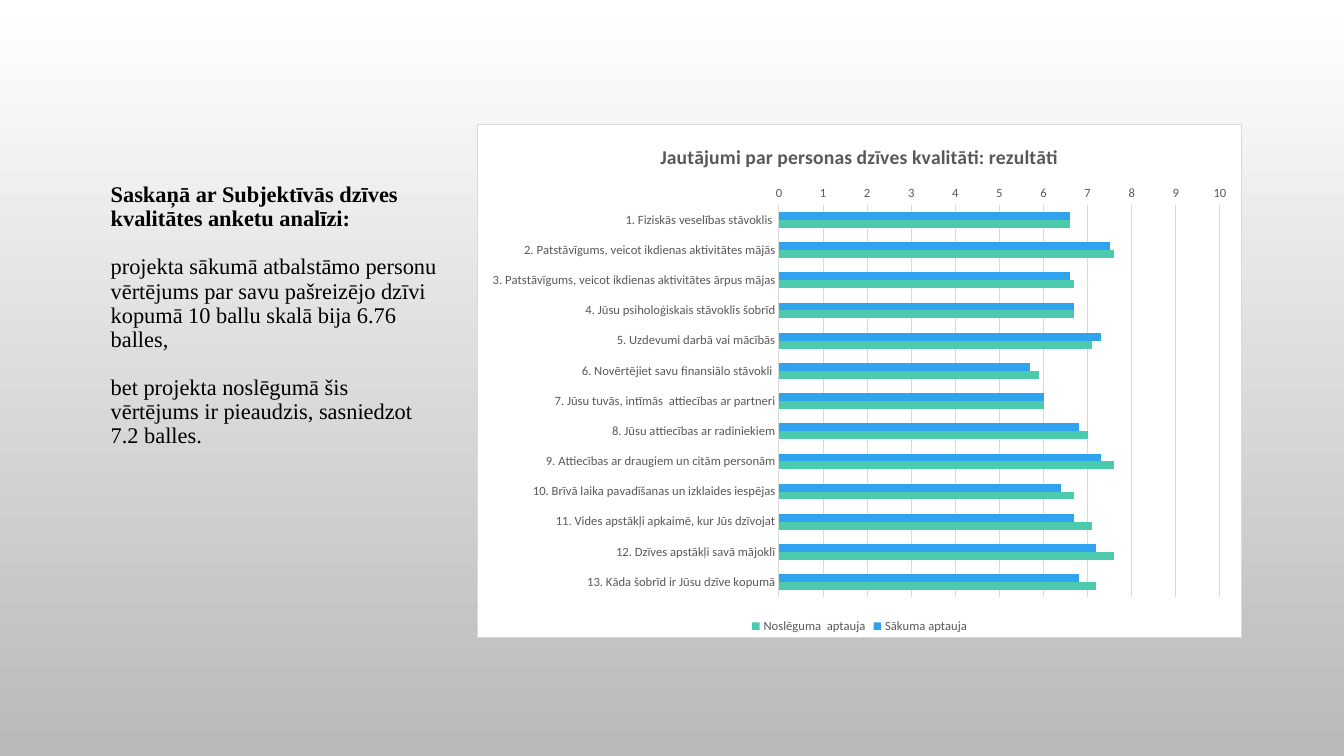
from lxml.etree import fromstring
from pptx import Presentation
from pptx.chart.data import CategoryChartData
from pptx.dml.color import RGBColor
from pptx.enum.chart import XL_CHART_TYPE, XL_LEGEND_POSITION, XL_TICK_MARK
from pptx.enum.text import MSO_ANCHOR
from pptx.oxml.ns import nsdecls
from pptx.util import Inches, Pt

WHITE = RGBColor(0xFF, 0xFF, 0xFF)
SILVER = RGBColor(0xB9, 0xB9, 0xB9)
BLACK = RGBColor(0, 0, 0)
GRAY = RGBColor(0x59, 0x59, 0x59)
PALE = RGBColor(0xD9, 0xD9, 0xD9)
BLUE = RGBColor(0x2F, 0xA3, 0xEE)
GREEN = RGBColor(0x4B, 0xCA, 0xAD)

TEXTS = [
    "Saskaņā ar Subjektīvās dzīves kvalitātes anketu analīzi:",
    "projekta sākumā atbalstāmo personu vērtējums par savu pašreizējo "
    "dzīvi kopumā 10 ballu skalā bija 6.76 balles,",
    "bet projekta noslēgumā šis vērtējums ir pieaudzis, sasniedzot 7.2 balles.",
]
TITLE = "Jautājumi par personas dzīves kvalitāti: rezultāti"
# Question, score at the start, score at the end
SCORES = [
    ("1. Fiziskās veselības stāvoklis ", 6.6, 6.6),
    ("2. Patstāvīgums, veicot ikdienas aktivitātes mājās", 7.5, 7.6),
    ("3. Patstāvīgums, veicot ikdienas aktivitātes ārpus mājas", 6.6, 6.7),
    ("4. Jūsu psiholoģiskais stāvoklis šobrīd", 6.7, 6.7),
    ("5. Uzdevumi darbā vai mācībās", 7.3, 7.1),
    ("6. Novērtējiet savu finansiālo stāvokli ", 5.7, 5.9),
    ("7. Jūsu tuvās, intīmās  attiecības ar partneri", 6, 6),
    ("8. Jūsu attiecības ar radiniekiem", 6.8, 7),
    ("9. Attiecības ar draugiem un citām personām", 7.3, 7.6),
    ("10. Brīvā laika pavadīšanas un izklaides iespējas", 6.4, 6.7),
    ("11. Vides apstākļi apkaimē, kur Jūs dzīvojat", 6.7, 7.1),
    ("12. Dzīves apstākļi savā mājoklī", 7.2, 7.6),
    ("13. Kāda šobrīd ir Jūsu dzīve kopumā", 6.8, 7.2),
]


def set_font(font, size, color, name="Calibri", bold=False):
    font.size, font.name, font.bold = Pt(size), name, bold
    font.color.rgb = color


def set_line(line, color):
    line.color.rgb = color
    line.width = Pt(0.75)


def paint_back(slide):
    fill = slide.background.fill
    fill.gradient()
    fill.gradient_angle = 270
    for stop, color, place in zip(fill.gradient_stops, (WHITE, SILVER), (0, 1)):
        stop.color.rgb = color
        stop.position = place


def add_text(slide, left, top, width, height):
    frame = slide.shapes.add_textbox(left, top, width, height).text_frame
    frame.word_wrap = True
    frame.vertical_anchor = MSO_ANCHOR.TOP
    frame.margin_top = Inches(0.35)
    for i, text in enumerate(TEXTS):
        para = frame.paragraphs[0] if i == 0 else frame.add_paragraph()
        para.text = text
        para.line_spacing = 0.9
        if i:
            para.space_before = Pt(17)
        set_font(para.runs[0].font, 16, BLACK, "Times New Roman", i == 0)


def fill_area(chart):
    # The chart area's own fill and border go just before its text settings
    area = fromstring(
        f'<c:spPr {nsdecls("c", "a")}>'
        f'<a:solidFill><a:srgbClr val="{WHITE}"/></a:solidFill>'
        f'<a:ln w="{Pt(0.75)}"><a:solidFill><a:srgbClr val="{PALE}"/>'
        '</a:solidFill></a:ln></c:spPr>')
    chart.font._element.addprevious(area)


def add_bars(slide, left, top, width, height):
    names, start, end = zip(*SCORES)
    data = CategoryChartData()
    data.categories = names
    data.add_series("Sākuma aptauja", start)
    data.add_series("Noslēguma  aptauja", end)
    chart = slide.shapes.add_chart(
        XL_CHART_TYPE.BAR_CLUSTERED, left, top, width, height, data).chart
    set_font(chart.font, 10, BLACK)
    chart._chartSpace.find("{*}txPr").addprevious(area_props())

    # Title and legend
    frame = chart.chart_title.text_frame
    frame.text = TITLE
    set_font(frame.paragraphs[0].runs[0].font, 14, GRAY, bold=True)
    chart.chart_title.include_in_layout = False
    chart.has_legend = True
    chart.legend.position = XL_LEGEND_POSITION.BOTTOM
    chart.legend.include_in_layout = False
    set_font(chart.legend.font, 9, GRAY)

    # Axes
    cats, vals = chart.category_axis, chart.value_axis
    for axis in (cats, vals):
        axis.major_tick_mark = axis.minor_tick_mark = XL_TICK_MARK.NONE
        set_font(axis.tick_labels.font, 9, GRAY)
    cats.reverse_order = True
    set_line(cats.format.line, PALE)
    vals.minimum_scale, vals.maximum_scale, vals.major_unit = 0, 10, 1
    vals.format.line.fill.background()
    set_line(vals.major_gridlines.format.line, PALE)

    # Bars
    plot = chart.plots[0]
    plot.gap_width, plot.overlap, plot.vary_by_categories = 182, 0, False
    for row, color in zip(plot.series, (BLUE, GREEN)):
        row.format.fill.solid()
        row.format.fill.fore_color.rgb = color


def area_props():
    return fromstring(
        f'<c:spPr {nsdecls("c", "a")}>'
        f'<a:solidFill><a:srgbClr val="{WHITE}"/></a:solidFill>'
        f'<a:ln w="{Pt(0.75)}"><a:solidFill><a:srgbClr val="{PALE}"/>'
        '</a:solidFill></a:ln></c:spPr>')


def main():
    deck = Presentation()
    deck.slide_width, deck.slide_height = Inches(13.33), Inches(7.5)
    slide = deck.slides.add_slide(deck.slide_layouts[6])
    paint_back(slide)
    add_text(slide, Inches(1), Inches(1.47), Inches(3.44), Inches(4.55))
    add_bars(slide, Inches(4.73), Inches(1.23), Inches(7.59), Inches(5.1))
    deck.save("out.pptx")


if __name__ == "__main__":
    main()
